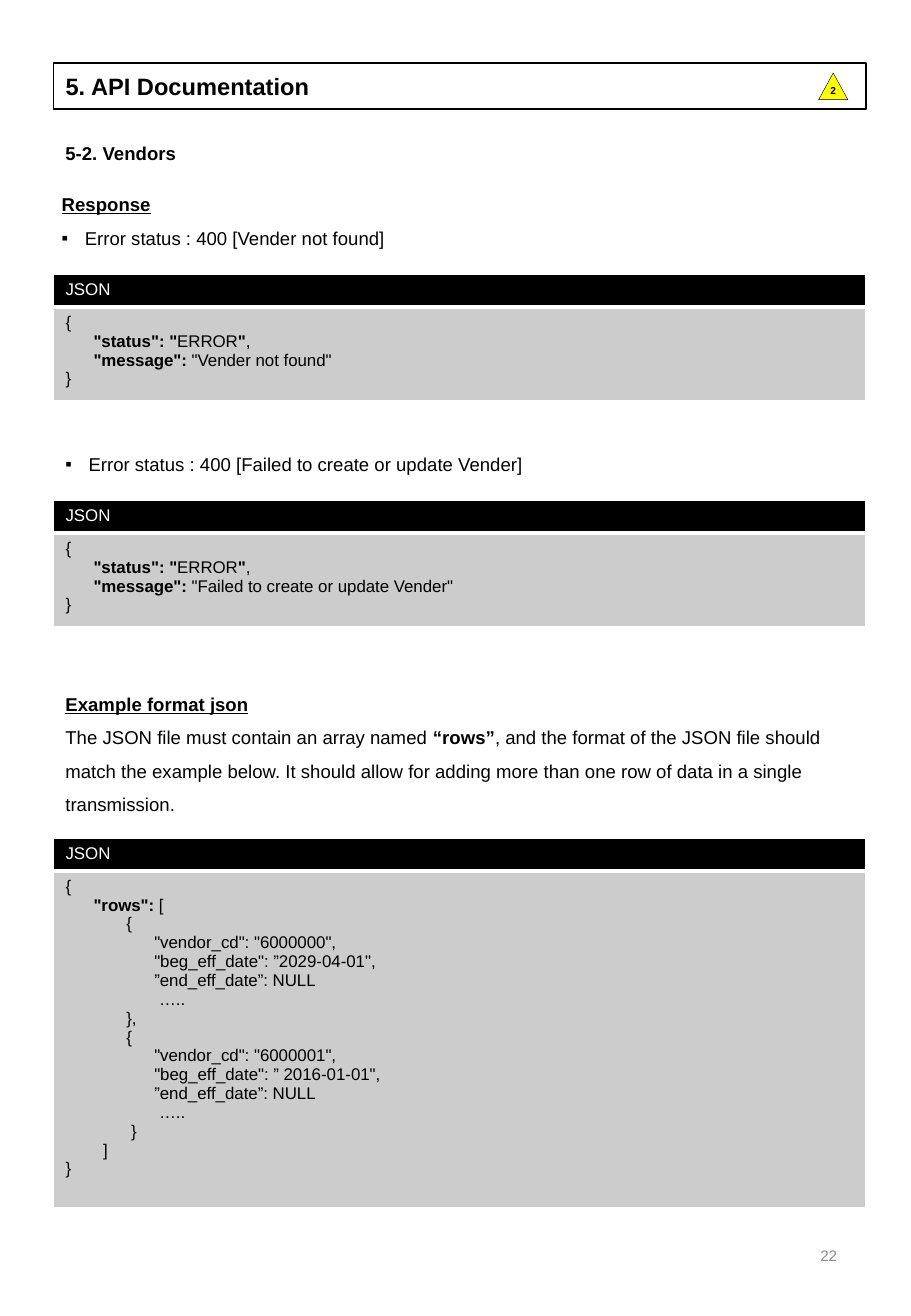
from dataclasses import dataclass

from lxml.etree import SubElement
from pptx import Presentation
from pptx.dml.color import RGBColor
from pptx.enum.shapes import MSO_SHAPE
from pptx.enum.text import MSO_ANCHOR, MSO_AUTO_SIZE, PP_ALIGN
from pptx.oxml.ns import qn
from pptx.util import Emu, Pt

PX = 9144  # 100 px to the inch
BLACK = RGBColor(0x00, 0x00, 0x00)
WHITE = RGBColor(0xFF, 0xFF, 0xFF)
CODE_GREY = RGBColor(0xCC, 0xCC, 0xCC)
PAGE_GREY = RGBColor(0x8C, 0x8C, 0x8C)
YELLOW = RGBColor(0xFF, 0xFF, 0x00)

LEFT, WIDTH = 44, 669
HEADER_HEIGHT = 26
BULLET_INDENT = 19
KEY, RECORD, FIELD, DOTS = 23, 50, 73, 77  # JSON indents


@dataclass(frozen=True)
class Line:
    """One paragraph; text between ** marks is bold."""
    text: str
    indent: int = 0
    bullet: str = ""
    underline: bool = False


@dataclass(frozen=True)
class TextBlock:
    left: int
    top: int
    height: int
    lines: tuple[Line, ...]
    spacing: float = 1.5


@dataclass(frozen=True)
class JsonBlock:
    top: int
    height: int
    lines: tuple[Line, ...]


def px(length: int) -> Emu:
    return Emu(length * PX)


def write(frame, lines, *, size=11, color=BLACK, align=PP_ALIGN.LEFT,
          anchor=MSO_ANCHOR.TOP, spacing=1.0) -> None:
    frame.word_wrap = True
    frame.vertical_anchor = anchor
    for index, line in enumerate(lines):
        paragraph = frame.paragraphs[0] if index == 0 else frame.add_paragraph()
        paragraph.alignment = align
        paragraph.line_spacing = spacing
        properties = paragraph._p.get_or_add_pPr()
        properties.set("marL", str(px(line.indent)))
        properties.set("indent", str(px(-line.indent) if line.bullet else 0))
        if line.bullet:
            SubElement(properties, qn("a:buFont"), typeface="Arial")
            SubElement(properties, qn("a:buChar"), char=line.bullet)
        for part, text in enumerate(line.text.split("**")):
            if not text:
                continue
            run = paragraph.add_run()
            run.text = text
            run.font.name = "Arial"
            run.font.size = Pt(size)
            run.font.color.rgb = color
            run.font.bold = part % 2 == 1
            run.font.underline = line.underline


def add_text(slide, block: TextBlock) -> None:
    box = slide.shapes.add_textbox(px(block.left), px(block.top), px(WIDTH), px(block.height))
    write(box.text_frame, block.lines, spacing=block.spacing)


def style_cell(cell, fill: RGBColor, edge_widths: dict[str, int]) -> None:
    properties = cell._tc.get_or_add_tcPr()
    for edge, points in edge_widths.items():
        border = SubElement(properties, qn(f"a:ln{edge}"), w=str(Pt(points)))
        SubElement(SubElement(border, qn("a:solidFill")), qn("a:srgbClr"), val=str(WHITE))
    cell.fill.solid()
    cell.fill.fore_color.rgb = fill


def add_json(slide, block: JsonBlock) -> None:
    table = slide.shapes.add_table(
        2, 1, px(LEFT), px(block.top), px(WIDTH), px(block.height)).table
    table.first_row = table.horz_banding = False
    table.rows[0].height = px(HEADER_HEIGHT)
    table.rows[1].height = px(block.height - HEADER_HEIGHT)
    header, body = table.cell(0, 0), table.cell(1, 0)
    write(header.text_frame, [Line("JSON")], size=10, color=WHITE)
    write(body.text_frame, block.lines, size=10)
    style_cell(header, BLACK, {"L": 1, "R": 1, "T": 1, "B": 3})
    style_cell(body, CODE_GREY, {"L": 1, "R": 1, "T": 3, "B": 1})


def error_lines(message: str) -> tuple[Line, ...]:
    return (
        Line("{"),
        Line('**"status": "**ERROR**"**,', KEY),
        Line(f'**"message": **"{message}"', KEY),
        Line("}"),
    )


def vendor_lines(code: str, begin: str) -> tuple[Line, ...]:
    return (
        Line("{", RECORD),
        Line(f'"vendor_cd": "{code}",', FIELD),
        Line(f'"beg_eff_date": ”{begin}",', FIELD),
        Line("”end_eff_date”: NULL", FIELD),
        Line("…..", DOTS),
    )


def error_status(message: str) -> Line:
    return Line(f"Error status : 400 [{message}]", BULLET_INDENT, "▪")


NOT_FOUND = "Vender not found"
SAVE_FAILED = "Failed to create or update Vender"

TEXT_BLOCKS = (
    TextBlock(LEFT, 112, 29, (Line("**5-2. Vendors**"),), spacing=1.0),
    TextBlock(41, 145, 62, (Line("**Response**", underline=True), error_status(NOT_FOUND))),
    TextBlock(LEFT, 359, 62, (error_status(SAVE_FAILED),)),
    TextBlock(LEFT, 556, 118, (
        Line("**Example format json**", underline=True),
        Line("The JSON file must contain an array named **“rows”**, and the format of the "
             "JSON file should match the example below. It should allow for adding more "
             "than one row of data in a single transmission."),
    )),
)

JSON_BLOCKS = (
    JsonBlock(226, 103, error_lines(NOT_FOUND)),
    JsonBlock(412, 103, error_lines(SAVE_FAILED)),
    JsonBlock(690, 303, (
        Line("{"),
        Line('**"rows": **[', KEY),
        *vendor_lines("6000000", "2029-04-01"),
        Line("},", RECORD),
        *vendor_lines("6000001", " 2016-01-01"),
        Line("}", 54),
        Line("]", 31),
        Line("}"),
    )),
)


def add_title(slide) -> None:
    title = slide.shapes.title
    title.left, title.top, title.width, title.height = px(LEFT), px(52), px(WIDTH), px(38)
    title.line.color.rgb = BLACK
    title.line.width = Pt(1)
    title.text_frame.auto_size = MSO_AUTO_SIZE.NONE
    write(title.text_frame, [Line("**5. API Documentation**")], size=14,
          anchor=MSO_ANCHOR.MIDDLE)


def add_revision_mark(slide) -> None:
    mark = slide.shapes.add_shape(
        MSO_SHAPE.ISOSCELES_TRIANGLE, px(674), px(60), px(24), px(22))
    mark.shadow.inherit = False
    mark.fill.solid()
    mark.fill.fore_color.rgb = YELLOW
    mark.line.color.rgb = BLACK
    mark.line.width = Pt(0.25)
    frame = mark.text_frame
    frame.margin_left = frame.margin_right = px(10)
    frame.margin_top, frame.margin_bottom = px(0), px(5)
    write(frame, [Line("**2**")], size=6, align=PP_ALIGN.CENTER, anchor=MSO_ANCHOR.MIDDLE)


def main() -> None:
    presentation = Presentation()
    presentation.slide_width, presentation.slide_height = px(750), px(1083)
    slide = presentation.slides.add_slide(presentation.slide_layouts[5])
    add_title(slide)
    for text_block in TEXT_BLOCKS:
        add_text(slide, text_block)
    for json_block in JSON_BLOCKS:
        add_json(slide, json_block)
    add_revision_mark(slide)
    page_number = slide.shapes.add_textbox(px(530), px(1004), px(169), px(58))
    write(page_number.text_frame, [Line("22")], size=9, color=PAGE_GREY,
          align=PP_ALIGN.RIGHT, anchor=MSO_ANCHOR.MIDDLE)
    presentation.save("out.pptx")


if __name__ == "__main__":
    main()
